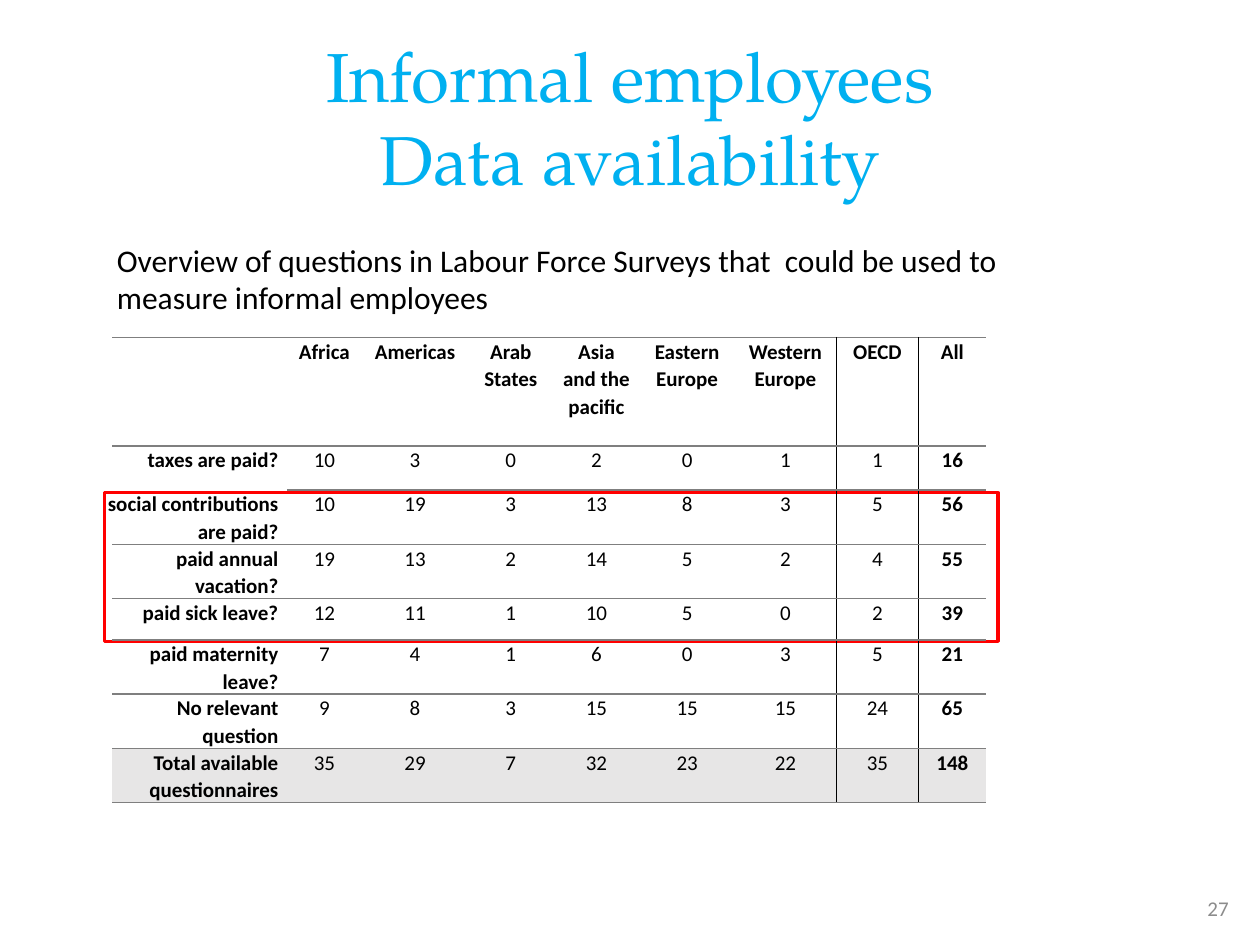
from lxml.etree import SubElement
from pptx import Presentation
from pptx.dml.color import RGBColor
from pptx.enum.shapes import MSO_SHAPE as Shape
from pptx.enum.text import MSO_ANCHOR as Anchor, MSO_AUTO_SIZE as AutoSize, PP_ALIGN as Align
from pptx.oxml.ns import qn
from pptx.util import Inches, Pt

SKY = RGBColor(0x00, 0xB0, 0xF0)
RED = RGBColor(0xFF, 0x00, 0x00)
BLACK = RGBColor(0x00, 0x00, 0x00)
RULE_GRAY = RGBColor(0x7F, 0x7F, 0x7F)
NUMBER_GRAY = RGBColor(0x8C, 0x8C, 0x8C)
TOTAL_GRAY = RGBColor(0xE7, 0xE6, 0xE6)
PLAIN_TABLE = "{2D5ABB26-0587-4C30-8999-92F81FD0307C}"

REGIONS = ["Africa", "Americas", "Arab States", "Asia and the pacific",
           "Eastern Europe", "Western Europe", "OECD", "All"]
ANSWERS = [
    ("taxes are paid?", 10, 3, 0, 2, 0, 1, 1, 16),
    ("social contributions are paid?", 10, 19, 3, 13, 8, 3, 5, 56),
    ("paid annual vacation?", 19, 13, 2, 14, 5, 2, 4, 55),
    ("paid sick leave?", 12, 11, 1, 10, 5, 0, 2, 39),
    ("paid maternity leave?", 7, 4, 1, 6, 0, 3, 5, 21),
    ("No relevant question", 9, 8, 3, 15, 15, 15, 24, 65),
    ("Total available questionnaires", 35, 29, 7, 32, 23, 22, 35, 148),
]
COLUMN_WIDTHS = [0.22, 1.39, 0.59, 0.85, 0.67, 0.69, 0.75, 0.81, 0.65, 0.54]
ROW_HEIGHTS = [0.86, 0.35, 0.43, 0.43, 0.33, 0.43, 0.43, 0.43]
LABEL, OECD, ALL = 1, 8, 9
SOCIAL, TOTAL = 2, 7


class SurveySlide:
    """Draws the elements of one slide in a shared style."""

    def __init__(self, slide, font="Calibri"):
        self.slide = slide
        self.font = font

    def style(self, paragraph, size, color=BLACK, align=Align.LEFT, bold=False, font=None):
        paragraph.alignment = align
        for run in paragraph.runs:
            run.font.name = font or self.font
            run.font.size = Pt(size)
            run.font.bold = bold
            run.font.color.rgb = color

    def text(self, box, words, size, anchor=Anchor.MIDDLE, auto_size=AutoSize.NONE, **look):
        frame = self.slide.shapes.add_textbox(*map(Inches, box)).text_frame
        frame.word_wrap = True
        frame.auto_size = auto_size
        frame.vertical_anchor = anchor
        frame.text = words
        self.style(frame.paragraphs[0], size, **look)

    def outline(self, box, color, width):
        frame = self.slide.shapes.add_shape(Shape.RECTANGLE, *map(Inches, box))
        frame.shadow.inherit = False
        frame.fill.background()
        frame.line.color.rgb = color
        frame.line.width = Pt(width)

    def borders(self, cell, edges):
        properties = cell._tc.get_or_add_tcPr()
        for side in "LRTB":
            line = SubElement(properties, qn(f"a:ln{side}"), w=str(Pt(1)))
            if side in edges:
                fill = SubElement(line, qn("a:solidFill"))
                SubElement(fill, qn("a:srgbClr"), val=str(edges[side]))
            else:
                SubElement(line, qn("a:noFill"))

    def cell(self, cell, words, align, bold, edges, fill):
        cell.margin_left = cell.margin_right = Inches(0.07)
        cell.margin_top = cell.margin_bottom = 0
        if words:
            cell.text_frame.text = words
            paragraph = cell.text_frame.paragraphs[0]
            paragraph.line_spacing = 1.07
            self.style(paragraph, 12, align=align, bold=bold)
        self.borders(cell, edges)
        if fill:
            cell.fill.solid()
            cell.fill.fore_color.rgb = fill
        else:
            cell.fill.background()

    def table(self, left, top):
        rows = [["", "", *REGIONS]] + [["", *map(str, answer)] for answer in ANSWERS]
        rows[SOCIAL][:2] = [rows[SOCIAL][LABEL], ""]
        table = self.slide.shapes.add_table(
            len(rows), len(COLUMN_WIDTHS), Inches(left), Inches(top),
            Inches(sum(COLUMN_WIDTHS)), Inches(sum(ROW_HEIGHTS))).table
        table._tbl.tblPr.find(qn("a:tableStyleId")).text = PLAIN_TABLE
        table.first_row = table.horz_banding = False
        for column, width in zip(table.columns, COLUMN_WIDTHS):
            column.width = Inches(width)
        for row, height in zip(table.rows, ROW_HEIGHTS):
            row.height = Inches(height)
        table.cell(SOCIAL, 0).merge(table.cell(SOCIAL, LABEL))
        for r, row in enumerate(rows):
            for c, words in enumerate(row):
                edges = {}
                if c > LABEL or (c == LABEL and r != SOCIAL):
                    edges = {"T": RULE_GRAY, "B": RULE_GRAY}
                if c == LABEL and r == SOCIAL - 1:
                    del edges["B"]
                if c in (OECD, ALL):
                    edges["L"] = BLACK
                if c in (OECD - 1, ALL - 1):
                    edges["R"] = BLACK
                self.cell(table.cell(r, c), words,
                          align=Align.RIGHT if c <= LABEL else Align.CENTER,
                          bold=r == 0 or c <= LABEL or c == ALL, edges=edges,
                          fill=TOTAL_GRAY if r == TOTAL and c >= LABEL else None)


def main():
    deck = Presentation()
    deck.slide_width, deck.slide_height = Inches(10), Inches(7.5)
    survey = SurveySlide(deck.slides.add_slide(deck.slide_layouts[6]))
    survey.text((0.5, 0.3, 9, 1.25), "Informal employees\vData availability", 39.6,
                color=SKY, align=Align.CENTER, font="TeX Gyre Pagella")
    survey.text((8.86, 7.06, 0.99, 0.29), "27", 12, color=NUMBER_GRAY, align=Align.RIGHT)
    survey.text((0.83, 1.86, 8.03, 0.71),
                "Overview of questions in Labour Force Surveys that  could be used to "
                "measure informal employees",
                18, anchor=Anchor.TOP, auto_size=AutoSize.SHAPE_TO_FIT_TEXT)
    survey.outline((0.83, 3.91, 7.09, 1.18), RED, 2)
    survey.table(0.67, 2.68)
    deck.save("out.pptx")


if __name__ == "__main__":
    main()
